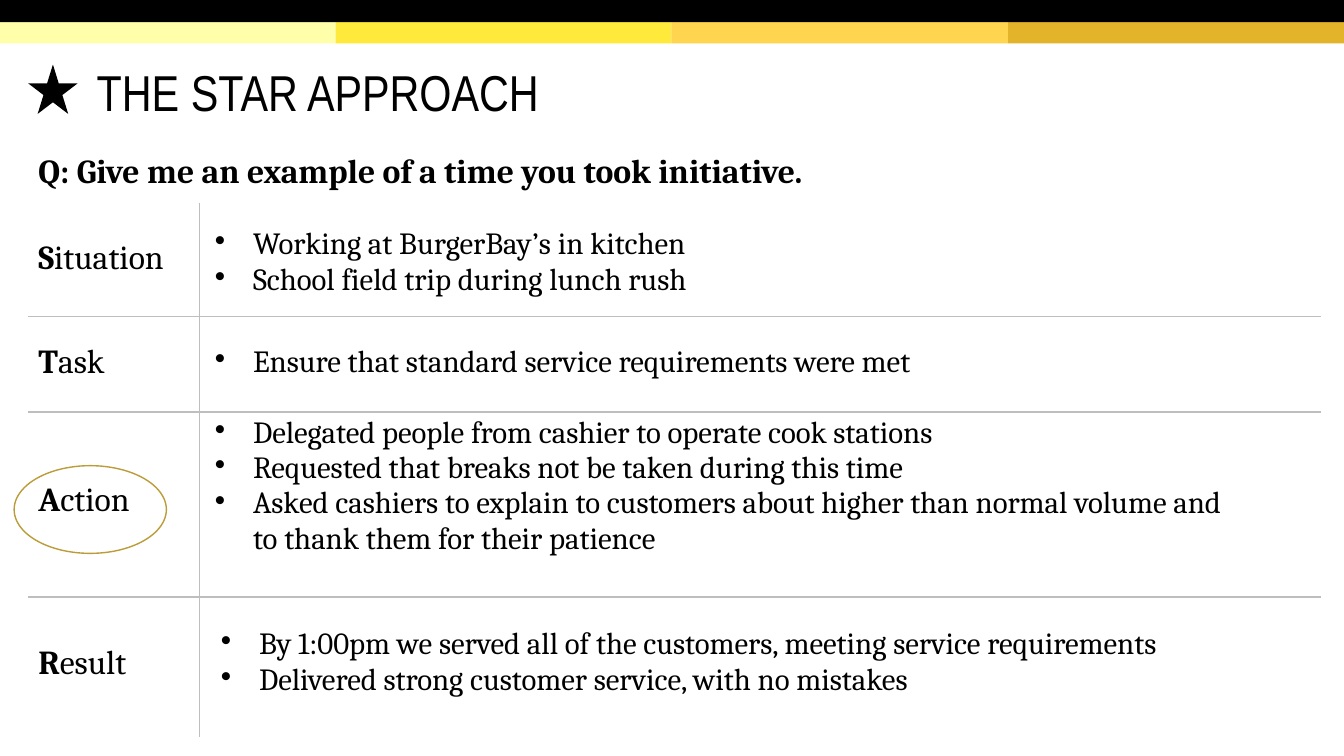
from lxml.etree import SubElement
from pptx import Presentation
from pptx.dml.color import RGBColor
from pptx.enum.shapes import MSO_SHAPE
from pptx.oxml.ns import qn
from pptx.util import Emu, Pt

PX = 9144  # 100 px to the inch
PAGE_WIDTH, PAGE_HEIGHT = 1333, 750
BAND_HEIGHT = 22

BLACK = RGBColor(0x00, 0x00, 0x00)
WHITE = RGBColor(0xFF, 0xFF, 0xFF)
RULE_GRAY = RGBColor(0xBE, 0xBE, 0xBE)
OVAL_GOLD = RGBColor(0xBB, 0x9C, 0x38)
BAND_COLORS = [
    RGBColor(0xFF, 0xFF, 0xAA),
    RGBColor(0xFF, 0xEA, 0x3C),
    RGBColor(0xFF, 0xD4, 0x4F),
    RGBColor(0xE3, 0xB4, 0x29),
]

TITLE = {"name": "Arial Narrow", "size": Pt(36), "bold": False}
QUESTION = {"name": "Cambria", "size": Pt(24), "bold": True}
INITIAL = QUESTION
LABEL = {**QUESTION, "bold": False}
ANSWER = {**LABEL, "size": Pt(22)}

COLUMN_WIDTHS = [170, 1112]
# label, row height, label top, answers top, answers indent, answers
STAR_ROWS = [
    ("Situation", 112, 35, 23, 53, [
        "Working at BurgerBay’s in kitchen",
        "School field trip during lunch rush",
    ]),
    ("Task", 95, 27, 28, 53, [
        "Ensure that standard service requirements were met",
    ]),
    ("Action", 183, 68, 3, 53, [
        "Delegated people from cashier to operate cook stations",
        "Requested that breaks not be taken during this time",
        "Asked cashiers to explain to customers about higher than normal "
        "volume and\vto thank them for their patience",
    ]),
    ("Result", 140, 47, 30, 59, [
        "By 1:00pm we served all of the customers, meeting service requirements",
        "Delivered strong customer service, with no mistakes",
    ]),
]


def px(length):
    return Emu(length * PX)


class StarSlide:
    def __init__(self, deck):
        self.page = deck.slides.add_slide(deck.slide_layouts[6])

    def style(self, span, values):
        for name, value in values.items():
            setattr(span.font, name, value)
        span.font.color.rgb = BLACK

    def indent(self, paragraph, left, hanging=0):
        properties = paragraph._p.get_or_add_pPr()
        properties.set("marL", str(px(left)))
        properties.set("indent", str(px(-hanging)))
        return properties

    def shape(self, kind, left, top, width, height, fill=None, line=None):
        shape = self.page.shapes.add_shape(
            kind, px(left), px(top), px(width), px(height))
        shape.shadow.inherit = False
        for part, color in ((shape.fill, fill), (shape.line.fill, line)):
            if color is None:
                part.background()
            else:
                part.solid()
                part.fore_color.rgb = color
        if line is not None:
            shape.line.width = Pt(1)

    def text(self, words, left, top, width, height, values):
        box = self.page.shapes.add_textbox(
            px(left), px(top), px(width), px(height))
        frame = box.text_frame
        margins = {"margin_left": 0, "margin_top": px(1),
                   "margin_right": 0, "margin_bottom": 0}
        for name, value in {"word_wrap": True, **margins}.items():
            setattr(frame, name, value)
        span = frame.paragraphs[0].add_run()
        span.text = words
        self.style(span, values)

    def border(self, cell, side, color, width):
        properties = cell._tc.get_or_add_tcPr()
        line = SubElement(properties, qn(f"a:ln{side}"), w=str(Pt(width)))
        fill = SubElement(line, qn("a:solidFill"))
        SubElement(fill, qn("a:srgbClr"), val=str(color))

    def label(self, cell, word):
        paragraph = cell.text_frame.paragraphs[0]
        self.indent(paragraph, 10)
        for letters, values in ((word[0], INITIAL), (word[1:], LABEL)):
            span = paragraph.add_run()
            span.text = letters
            self.style(span, values)

    def bullets(self, cell, indent, answers):
        frame = cell.text_frame
        for index, answer in enumerate(answers):
            paragraph = frame.add_paragraph() if index else frame.paragraphs[0]
            properties = self.indent(paragraph, indent, hanging=38)
            SubElement(properties, qn("a:buChar"), char="•")
            paragraph.text = answer
            for span in paragraph.runs:
                self.style(span, ANSWER)

    def table(self, left, top):
        heights = [row[1] for row in STAR_ROWS]
        table = self.page.shapes.add_table(
            len(STAR_ROWS), len(COLUMN_WIDTHS), px(left), px(top),
            px(sum(COLUMN_WIDTHS)), px(sum(heights))).table
        table.first_row = table.horz_banding = False
        for column, width in zip(table.columns, COLUMN_WIDTHS):
            column.width = px(width)
        last = len(STAR_ROWS) - 1
        for index, row in enumerate(STAR_ROWS):
            word, height, label_top, answers_top, indent, answers = row
            table.rows[index].height = px(height)
            label_cell, answer_cell = table.rows[index].cells
            self.label(label_cell, word)
            self.bullets(answer_cell, indent, answers)
            for cell, inset in ((label_cell, label_top), (answer_cell, answers_top)):
                margins = {"margin_left": 0, "margin_top": px(inset),
                           "margin_right": 0, "margin_bottom": 0}
                for name, value in margins.items():
                    setattr(cell, name, value)
                is_label = cell is label_cell
                self.border(cell, "L", WHITE if is_label else RULE_GRAY, 1)
                self.border(cell, "R", RULE_GRAY if is_label else WHITE, 1)
                self.border(cell, "T", RULE_GRAY if index else WHITE, 1.5)
                self.border(cell, "B", RULE_GRAY if index < last else WHITE, 1.5)
                cell.fill.background()


def main():
    deck = Presentation()
    deck.slide_width, deck.slide_height = px(PAGE_WIDTH), px(PAGE_HEIGHT)
    slide = StarSlide(deck)

    count = len(BAND_COLORS)
    edges = [round(PAGE_WIDTH * step / count) for step in range(count + 1)]
    for left, right, color in zip(edges, edges[1:], BAND_COLORS):
        slide.shape(MSO_SHAPE.RECTANGLE, left, BAND_HEIGHT, right - left,
                    BAND_HEIGHT - 1, fill=color)
    slide.shape(MSO_SHAPE.RECTANGLE, 0, 0, PAGE_WIDTH, BAND_HEIGHT, fill=BLACK)

    slide.shape(MSO_SHAPE.STAR_5_POINT, 28, 64, 49, 49, fill=BLACK)
    slide.text("THE STAR APPROACH", 96, 60, 816, 63, TITLE)
    slide.text("Q: Give me an example of a time you took initiative.",
               38, 148, 880, 43, QUESTION)
    slide.table(28, 202)
    slide.shape(MSO_SHAPE.OVAL, 14, 462, 151, 87, line=OVAL_GOLD)

    deck.save("out.pptx")


if __name__ == "__main__":
    main()
